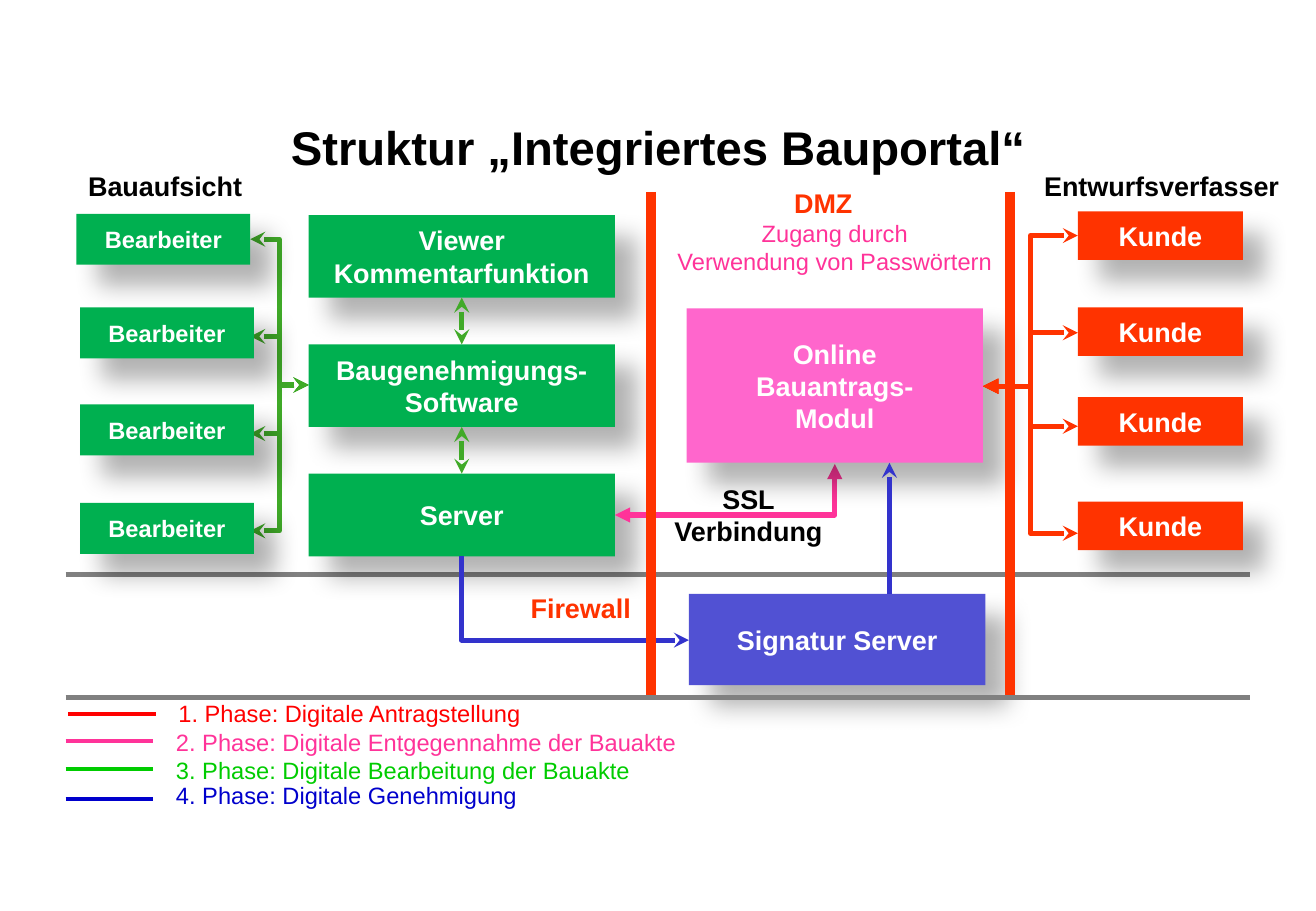
from dataclasses import dataclass
from typing import Any

from lxml import etree
from pptx import Presentation
from pptx import util as u
from pptx.dml.color import RGBColor
from pptx.enum import shapes, text
from pptx.oxml import ns

CELL = u.Inches(0.1)
COLOURS = {
    "black": "000000", "white": "FFFFFF", "grey": "808080",
    "green": "00B050", "arrow_green": "40AA28", "orange": "FF3300",
    "pink": "FF66CC", "deep_pink": "FF3399", "violet": "5151D3",
    "blue": "3333CC", "phase_red": "FF0000", "phase_green": "00CC00",
    "phase_blue": "0000CC",
}


def cells(*counts):
    return [round(count * CELL) for count in counts]


def rgb(name):
    return RGBColor.from_string(COLOURS[name])


def child(parent, tag, **attributes):
    return etree.SubElement(parent, ns.qn(tag), attributes)


def write(frame, words, size, colour, bold, align, wrap):
    frame.text = words
    frame.word_wrap = wrap
    for paragraph in frame.paragraphs:
        paragraph.alignment = align
        for run in paragraph.runs:
            run.font.name = "Arial"
            run.font.size = u.Pt(size)
            run.font.bold = bold
            run.font.color.rgb = rgb(colour)


@dataclass
class Region:
    slide: Any
    left: float
    top: float

    def block(self, x, y, w, h, words, fill, size=16):
        box = self.slide.shapes.add_shape(
            shapes.MSO_SHAPE.RECTANGLE,
            *cells(self.left + x, self.top + y, w, h))
        box.fill.solid()
        box.fill.fore_color.rgb = rgb(fill)
        box.line.fill.background()
        box.shadow.inherit = False
        effects = box._element.spPr.find(ns.qn("a:effectLst"))
        shade = child(effects, "a:outerShdw", blurRad=str(u.Pt(15)),
                      dist=str(u.Pt(18)), dir="2700000", algn="tl",
                      rotWithShape="0")
        tint = child(shade, "a:srgbClr", val=COLOURS["black"])
        child(tint, "a:alpha", val="30000")
        box.text_frame.vertical_anchor = text.MSO_ANCHOR.MIDDLE
        write(box.text_frame, words, size, "white", True,
              text.PP_ALIGN.CENTER, False)

    def label(self, x, y, w, h, words, colour="black", size=16, bold=True,
              align=text.PP_ALIGN.CENTER, wrap=False, inset=0.5,
              anchor=text.MSO_ANCHOR.TOP):
        box = self.slide.shapes.add_textbox(
            *cells(self.left + x, self.top + y, w, h))
        frame = box.text_frame
        frame.margin_top = frame.margin_bottom = cells(inset)[0]
        frame.vertical_anchor = anchor
        write(frame, words, size, colour, bold, align, wrap)

    def link(self, start, end, colour, width=3, head=None, tail=None, bends=0):
        kind = shapes.MSO_CONNECTOR.ELBOW if bends else shapes.MSO_CONNECTOR.STRAIGHT
        ends = [(self.left + x, self.top + y) for x, y in (start, end)]
        connector = self.slide.shapes.add_connector(
            kind, *cells(*ends[0], *ends[1]))
        connector.line.color.rgb = rgb(colour)
        connector.line.width = u.Pt(width)
        properties = connector._element.spPr
        if bends == 1:
            properties.find(ns.qn("a:prstGeom")).set("prst", "bentConnector2")
        outline = properties.find(ns.qn("a:ln"))
        for tag, arrow in (("a:headEnd", head), ("a:tailEnd", tail)):
            if arrow:
                child(outline, tag, type=arrow)
        child(properties, "a:effectLst")


def heading(region):
    region.label(0, 0, 86.7, 4.2, "Struktur „Integriertes Bauportal“", size=28,
                 wrap=True, inset=0, anchor=text.MSO_ANCHOR.MIDDLE)


def building_authority(region):
    for row in range(4):
        region.link((19.1, 18.2), (14.3, 6.2 + 8 * row), "arrow_green",
                    head="stealth", tail="stealth", bends=2)
    modules = ["Viewer\vKommentarfunktion", "Baugenehmigungs-\vSoftware", "Server"]
    pitch, height, axis = 10.65, 6.8, 31.7
    for row, module in enumerate(modules):
        region.block(19.1, 4.2 + pitch * row, 25.2, height, module, "green")
    for row in range(len(modules) - 1):
        top = 4.2 + pitch * row
        region.link((axis, top + height), (axis, top + pitch), "arrow_green",
                    head="stealth", tail="stealth")
    for x, y in ((0, 4.1), (0.3, 11.8), (0.3, 19.8), (0.3, 27.9)):
        region.block(x, y, 14.3, 4.2, "Bearbeiter", "green", 14)
    region.label(-0.7, 0, 16, 2.9, "Bauaufsicht")


def demilitarised_zone(region):
    region.link((-3, 27.5), (15.1, 23.3), "deep_pink", head="triangle",
                tail="triangle", bends=1)
    region.label(0.8, 24.3, 14.4, 6.4, "SSL\vVerbindung")
    region.block(2.9, 10.5, 24.4, 12.7, "Online\vBauantrags-\vModul", "pink")
    region.label(0.2, 2.6, 29.8, 5.7, "Zugang durch\vVerwendung von Passwörtern",
                 "deep_pink", 14, False, wrap=True)
    region.label(10.7, 0, 6.9, 3.7, "DMZ", "orange")


def customers(region):
    for port in (5.9, 13.9, 21.6, 30.4):
        region.link((0, 18.3), (7.8, port), "orange", head="triangle",
                    tail="stealth", bends=2)
    for y in (3.9, 11.8, 19.2, 27.8):
        region.block(7.8, y, 13.6, 4, "Kunde", "orange")
    region.label(3.2, 0, 23, 2.7, "Entwurfsverfasser")


def signature(region):
    region.block(18.7, 3.1, 24.4, 7.5, "Signatur Server", "violet")
    region.link((18.7, 6.9), (0, 0), "blue", head="stealth", bends=1)
    region.link((35.2, 3.1), (35.2, -7.7), "blue", tail="stealth")
    region.label(4.6, 2.4, 10.4, 3.7, "Firewall", "orange")


def firewalls(region):
    for x in (0, 29.5):
        region.link((x, 0), (x, 41.6), "orange", 6)


def ground_line(region):
    region.link((0, 0), (97.5, 0), "grey")


def legend(region):
    phases = [
        (0.2, 1.3, 0, "phase_red", "1. Phase: Digitale Antragstellung"),
        (0, 3.5, 2.4, "deep_pink", "2. Phase: Digitale Entgegennahme der Bauakte"),
        (0, 5.8, 4.7, "phase_green", "3. Phase: Digitale Bearbeitung der Bauakte"),
        (0, 8.3, 6.8, "phase_blue", "4. Phase: Digitale Genehmigung"),
    ]
    for x, stroke, top, colour, phase in phases:
        region.link((x, stroke), (x + 7.2, stroke), colour, 2.25)
        region.label(x + 8.1, top, 52.4, 2.4, phase, colour, 14, False,
                     text.PP_ALIGN.LEFT, True, 0)


def main():
    deck = Presentation()
    deck.slide_width, deck.slide_height = cells(108.3, 75)
    slide = deck.slides.add_slide(deck.slide_layouts[6])
    layout = [
        (ground_line, 5.4, 47.3),
        (heading, 10.8, 10),
        (building_authority, 6.3, 13.5),
        (demilitarised_zone, 53.6, 14.9),
        (customers, 80.9, 13.5),
        (signature, 38, 45.8),
        (firewalls, 53.6, 15.8),
        (ground_line, 5.4, 57.4),
        (legend, 5.4, 57.5),
    ]
    for draw, left, top in layout:
        draw(Region(slide, left, top))
    deck.save("out.pptx")


if __name__ == "__main__":
    main()
